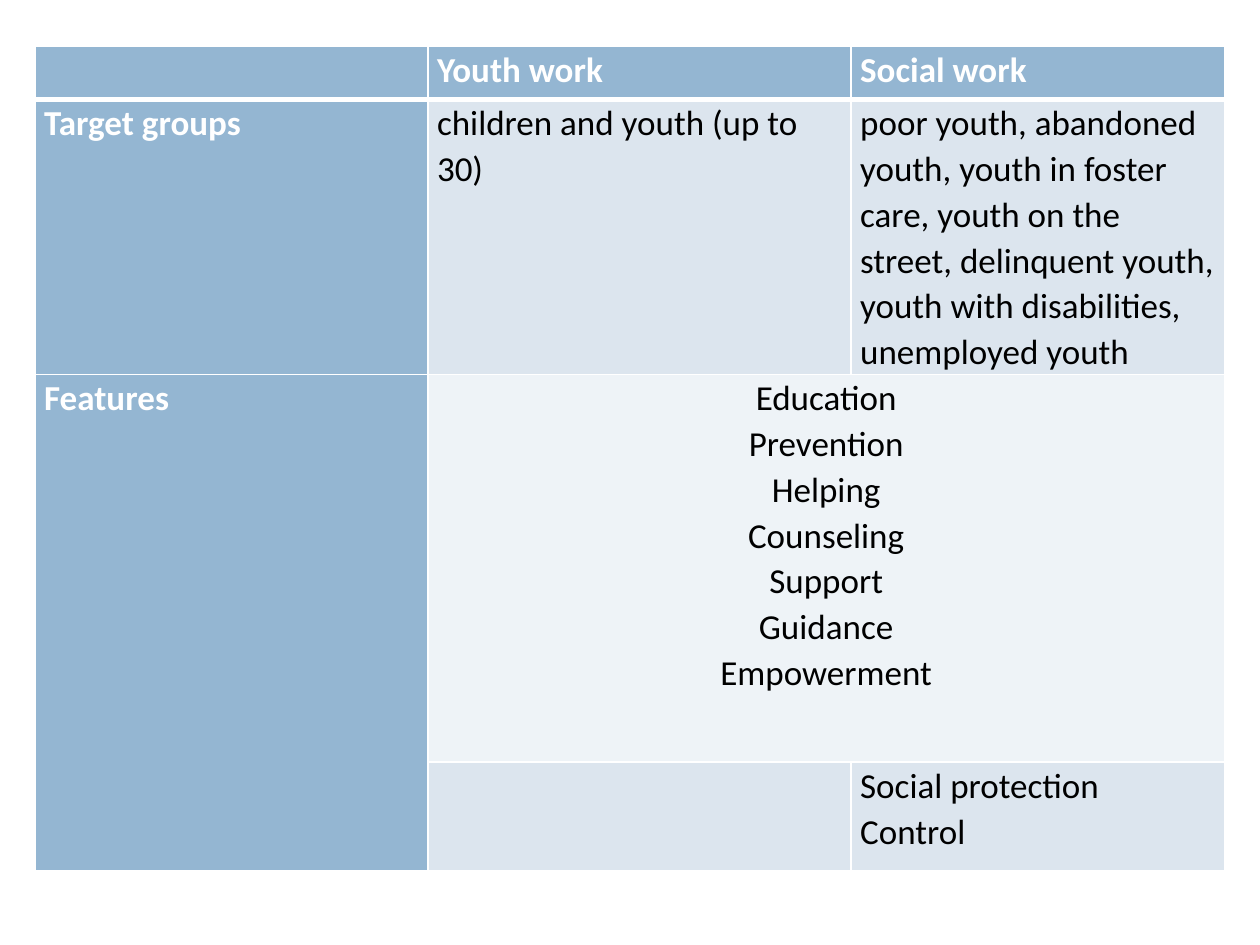
import dataclasses

import pptx
import pptx.dml.color
import pptx.enum.text
import pptx.oxml
import pptx.oxml.ns
import pptx.util
from pptx.util import Cm


@dataclasses.dataclass(frozen=True)
class Theme:
    font: str = "Calibri"
    size: int = 20
    line_spacing: float = 1.07
    heading_fill: str = "94B6D2"
    heading_text: str = "FFFFFF"
    body_text: str = "000000"
    band_dark: str = "DCE5EE"
    band_light: str = "EEF3F7"
    border: str = "FFFFFF"
    thin: int = 1
    thick: int = 3


THEME = Theme()
COLUMN_WIDTHS = (7.92, 8.53, 7.52)
ROW_HEIGHTS = (1.07, 4.45, 7.82, 2.18)
HEADING_ROW, TARGET_ROW, SHARED_ROW, SOCIAL_ROW = range(4)

TEXTS = {
    (HEADING_ROW, 1): ["Youth work"],
    (HEADING_ROW, 2): ["Social work"],
    (TARGET_ROW, 0): ["Target groups"],
    (TARGET_ROW, 1): ["children and youth (up to 30)"],
    (TARGET_ROW, 2): [
        "poor youth, abandoned youth, youth in foster care, youth on the street, "
        "delinquent youth, youth with disabilities, unemployed youth"
    ],
    (SHARED_ROW, 0): ["Features"],
    (SHARED_ROW, 1): [
        "Education", "Prevention", "Helping", "Counseling",
        "Support", "Guidance", "Empowerment",
    ],
    (SOCIAL_ROW, 2): ["Social protection", "Control"],
}


def rgb(value):
    return pptx.dml.color.RGBColor.from_string(value)


def draw_borders(cell, row):
    properties = cell._tc.get_or_add_tcPr()
    for side in "LRTB":
        under_heading = (row, side) in ((HEADING_ROW, "B"), (TARGET_ROW, "T"))
        width = pptx.util.Pt(THEME.thick if under_heading else THEME.thin)
        properties.append(pptx.oxml.parse_xml(
            f'<a:ln{side} {pptx.oxml.ns.nsdecls("a")} w="{width}"><a:solidFill>'
            f'<a:srgbClr val="{THEME.border}"/></a:solidFill></a:ln{side}>'
        ))


def style_cell(cell, row, is_heading):
    draw_borders(cell, row)
    band = THEME.band_light if row == SHARED_ROW else THEME.band_dark
    cell.fill.solid()
    cell.fill.fore_color.rgb = rgb(THEME.heading_fill if is_heading else band)
    cell.margin_left = cell.margin_right = Cm(0.18)
    cell.margin_top = cell.margin_bottom = 0


def write_cell(cell, lines, is_heading, alignment):
    cell.text = "\n".join(lines)
    for para in cell.text_frame.paragraphs:
        para.alignment = alignment
        para.line_spacing = THEME.line_spacing
        para.font.name = THEME.font
        para.font.size = pptx.util.Pt(THEME.size)
        para.font.bold = is_heading
        para.font.color.rgb = rgb(THEME.heading_text if is_heading else THEME.body_text)


def add_comparison_table(page, left, top):
    """Compare youth work and social work, with their shared features merged."""
    table = page.shapes.add_table(
        len(ROW_HEIGHTS), len(COLUMN_WIDTHS), left, top,
        Cm(sum(COLUMN_WIDTHS)), Cm(sum(ROW_HEIGHTS)),
    ).table
    table.first_row = table.horz_banding = False
    for column, width in zip(table.columns, COLUMN_WIDTHS):
        column.width = Cm(width)
    for table_row, height in zip(table.rows, ROW_HEIGHTS):
        table_row.height = Cm(height)

    align = pptx.enum.text.PP_ALIGN
    for row in range(len(ROW_HEIGHTS)):
        for column in range(len(COLUMN_WIDTHS)):
            cell = table.cell(row, column)
            is_heading = row == HEADING_ROW or column == 0
            style_cell(cell, row, is_heading)
            if (row, column) in TEXTS:
                is_shared = (row, column) == (SHARED_ROW, 1)
                alignment = align.CENTER if is_shared else align.LEFT
                write_cell(cell, TEXTS[row, column], is_heading, alignment)

    table.cell(SHARED_ROW, 0).merge(table.cell(SOCIAL_ROW, 0))
    table.cell(SHARED_ROW, 1).merge(table.cell(SHARED_ROW, 2))


def main():
    deck = pptx.Presentation()
    deck.slide_width, deck.slide_height = Cm(25.4), Cm(19.05)
    page = deck.slides.add_slide(deck.slide_layouts[6])
    add_comparison_table(page, Cm(0.71), Cm(0.93))
    deck.save("out.pptx")


if __name__ == "__main__":
    main()
